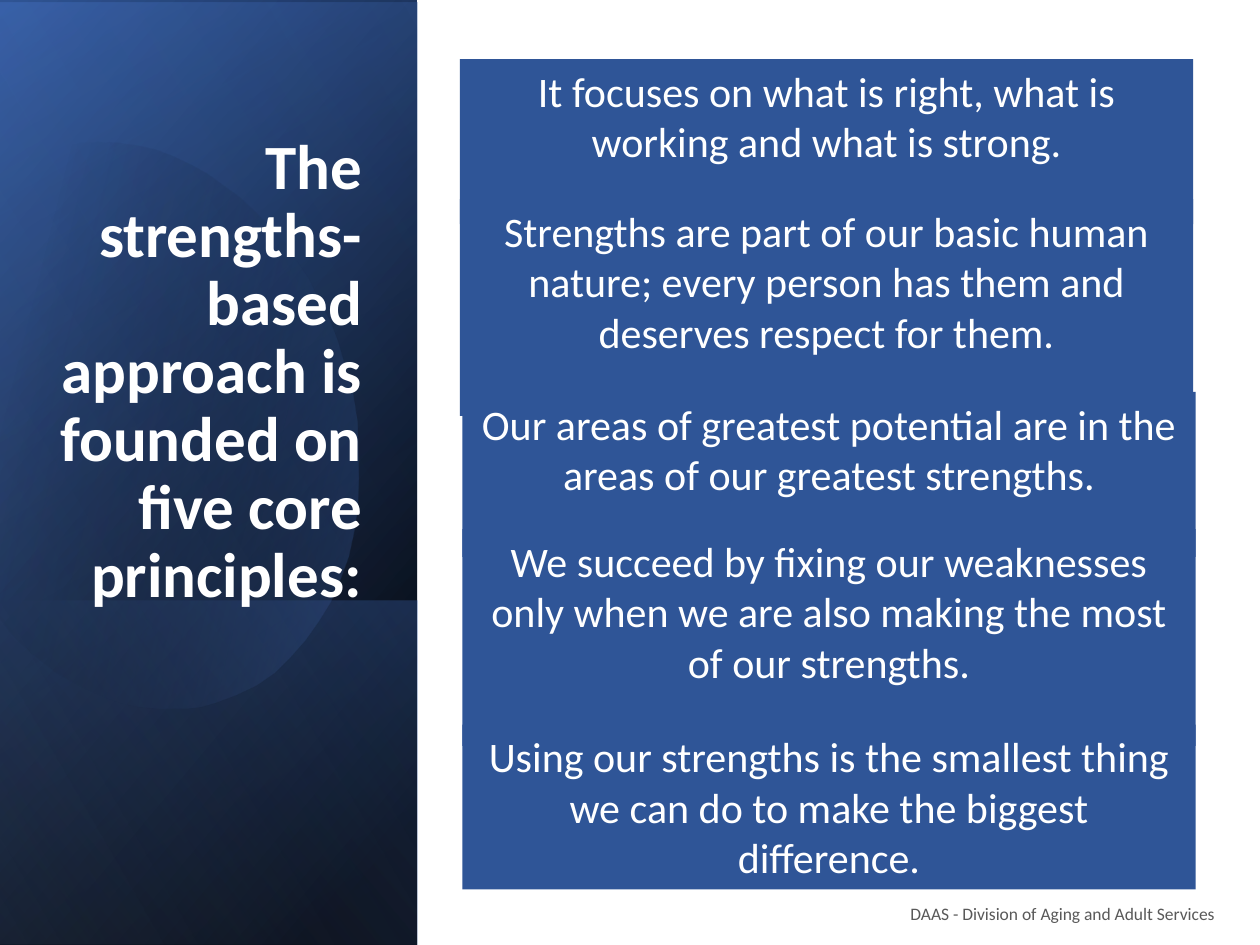
from math import cos, radians, sin

from lxml.etree import SubElement
from pptx import Presentation
from pptx.dml.color import RGBColor
from pptx.enum.shapes import MSO_SHAPE
from pptx.enum.text import MSO_ANCHOR, PP_ALIGN
from pptx.oxml.ns import qn
from pptx.util import Pt

TITLE = "The strengths-based approach is founded on five core principles:"
FOOTER = "DAAS - Division of Aging and Adult Services"
TWO_LINES, THREE_LINES = 94.3, 123.8
PRINCIPLES = [
    ("It focuses on what is right, what is working and what is strong.",
     262.8, 33.8, TWO_LINES),
    ("Strengths are part of our basic human nature; every person has them "
     "and deserves respect for them.", 262.8, 113.8, THREE_LINES),
    ("Our areas of greatest potential are in the areas of our greatest strengths.",
     264.2, 223.9, TWO_LINES),
    ("We succeed by fixing our weaknesses only when we are also making the most "
     "of our strengths.", 264.2, 302.4, THREE_LINES),
    ("Using our strengths is the smallest thing we can do to make the biggest "
     "difference.", 264.2, 414, TWO_LINES),
]
PANEL_W = 238.3
BASE = (0, 540, 50, [(8, "000000", 100), (100, "2F5597", 100)])
LAYERS = [
    (1.4, 540, 30, [(0, "000000", 0), (99, "4472C4", 46)]),
    (343, 197.3, 130, [(2, "4472C4", 29), (100, "000000", 30)]),
]
SHEEN = (-0.4, 540, 120, [(0, "000000", 0), (99, "8FAADC", 11)])
OVAL_STOPS = [(29, "000000", 0), (100, "4472C4", 43)]
OVAL_TURN, OVAL_CENTER = -16.1, (85.7, 240.8)
OVAL_START = (69, 82)
OVAL_CURVES = [
    [(123, 88), (176, 138), (197, 209)],
    [(221, 297), (189, 382), (123, 401)],
    [(82, 413), (38, 396), (5, 360)],
    [(-2, 351)],
    [(-18, 120)],
    [(-11, 111)],
    [(1, 99), (16, 90), (32, 85)],
    [(45, 81), (57, 81), (69, 82)],
]


def color(value):
    """Turn a hex string into a colour."""
    return RGBColor.from_string(value)


def gradient(sp, angle, stops):
    """Fill a shape with a linear gradient of (position, colour, opacity) stops."""
    sp.shadow.inherit = False
    sp.line.fill.background()
    sp.fill.gradient()
    grad = sp._element.spPr.find(qn("a:gradFill"))
    for child in list(grad):
        grad.remove(child)
    grad.set("rotWithShape", "1")
    gs_list = SubElement(grad, qn("a:gsLst"))
    for pos, value, opacity in stops:
        gs = SubElement(gs_list, qn("a:gs"), pos=str(pos * 1000))
        clr = SubElement(gs, qn("a:srgbClr"), val=value)
        if opacity < 100:
            SubElement(clr, qn("a:alpha"), val=str(opacity * 1000))
    SubElement(grad, qn("a:lin"), ang=str(angle * 60000), scaled="0")


def add_panel(s, top, height, angle, stops):
    """Add a quarter-turned, mirrored gradient panel at the left edge."""
    offset = (PANEL_W - height) / 2
    sp = s.shapes.add_shape(MSO_SHAPE.RECTANGLE, Pt(offset), Pt(top - offset),
                            Pt(height), Pt(PANEL_W))
    sp.rotation = 90
    sp._element.spPr.find(qn("a:xfrm")).set("flipH", "1")
    gradient(sp, angle, stops)


def bezier(a, b, c, d, t):
    """Return the point at t on a cubic curve."""
    u = 1 - t
    return tuple(u**3 * w + 3 * u * u * t * x + 3 * u * t * t * y + t**3 * z
                 for w, x, y, z in zip(a, b, c, d))


def untilt(point):
    """Turn a point back around the oval's centre."""
    cx, cy = OVAL_CENTER
    x, y, a = point[0] - cx, point[1] - cy, radians(-OVAL_TURN)
    return cx + x * cos(a) - y * sin(a), cy + x * sin(a) + y * cos(a)


def add_oval(s):
    """Add the tilted, cut-off oval."""
    points = [OVAL_START]
    for curve in OVAL_CURVES:
        start = points[-1]
        points += (curve if len(curve) == 1 else
                   [bezier(start, *curve, i / 16) for i in range(1, 17)])
    points = [untilt(p) for p in points]
    builder = s.shapes.build_freeform(*points[0], scale=Pt(1))
    builder.add_line_segments(points[1:], close=True)
    sp = builder.convert_to_shape()
    sp.rotation = OVAL_TURN
    gradient(sp, 30, OVAL_STOPS)


def write(sp, text, size=24, fill="FFFFFF", bold=False, align=PP_ALIGN.CENTER,
          anchor=MSO_ANCHOR.TOP, spacing=None, left=7.2, top=3.6, bottom=3.6):
    """Put one formatted paragraph into a shape."""
    tf = sp.text_frame
    tf.word_wrap = True
    tf.vertical_anchor = anchor
    tf.margin_left, tf.margin_top, tf.margin_bottom = Pt(left), Pt(top), Pt(bottom)
    p = tf.paragraphs[0]
    p.alignment, p.line_spacing = align, spacing
    r = p.add_run()
    r.text = text
    r.font.name, r.font.size, r.font.bold = "Calibri", Pt(size), bold
    r.font.color.rgb = color(fill)


def main():
    """Build the slide and save it."""
    prs = Presentation()
    prs.slide_width, prs.slide_height = Pt(720), Pt(540)
    s = prs.slides.add_slide(prs.slide_layouts[6])
    for layer in [BASE, *LAYERS]:
        add_panel(s, *layer)
    add_oval(s)
    add_panel(s, *SHEEN)

    title = s.shapes.add_textbox(Pt(24.5), Pt(126), Pt(189.4), Pt(266.4))
    write(title, TITLE, size=36, bold=True, align=PP_ALIGN.RIGHT,
          anchor=MSO_ANCHOR.BOTTOM, spacing=0.9, bottom=43)
    footer = s.shapes.add_textbox(Pt(489.6), Pt(491.8), Pt(228.2), Pt(47.5))
    write(footer, FOOTER, size=10, fill="595959", anchor=MSO_ANCHOR.MIDDLE,
          left=14, top=16)

    for text, left, top, height in PRINCIPLES:
        sp = s.shapes.add_shape(MSO_SHAPE.RECTANGLE, Pt(left), Pt(top),
                                Pt(419), Pt(height))
        sp.shadow.inherit = False
        sp.fill.solid()
        sp.fill.fore_color.rgb = color("2F5597")
        sp.line.fill.background()
        write(sp, text)
    prs.save("out.pptx")


if __name__ == "__main__":
    main()
